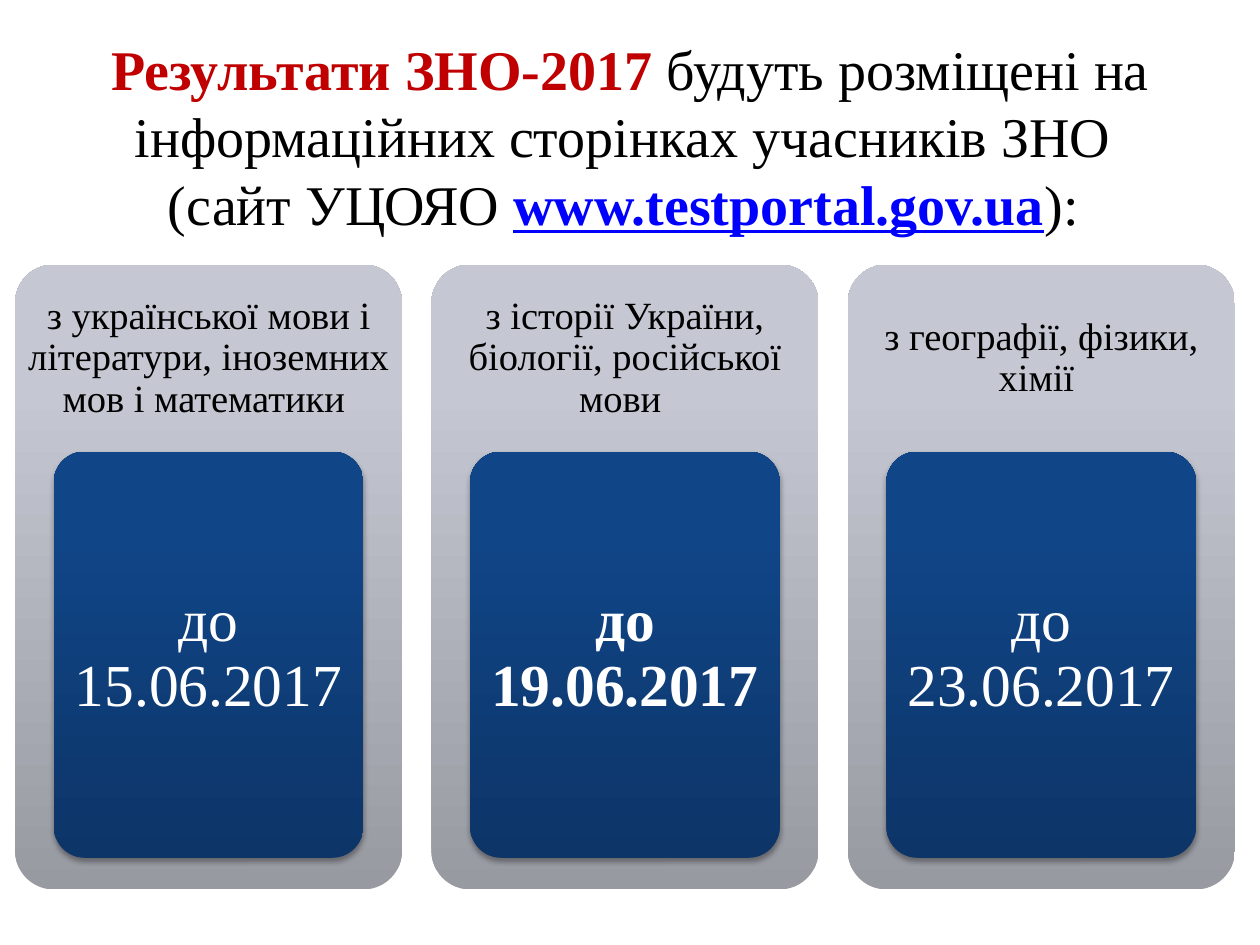
from copy import deepcopy
from dataclasses import dataclass

from lxml.etree import SubElement
from pptx import Presentation
from pptx.dml.color import RGBColor
from pptx.enum.shapes import MSO_SHAPE as Shape
from pptx.enum.text import MSO_ANCHOR as Anchor, PP_ALIGN as Align
from pptx.oxml.ns import qn
from pptx.util import Pt


@dataclass(frozen=True)
class Theme:
    font: str = "Times New Roman"
    title_size: int = 32
    label_size: int = 22
    date_size: int = 34
    text: str = "000000"
    accent: str = "C00000"
    link: str = "0000FF"
    light: str = "FFFFFF"
    shadow: str = "000000"
    # Gradients run from bottom to top
    panel: tuple = ((0, "989AA2"), (0.8, "C5C8D2"), (1, "C5C9D3"))
    card: tuple = ((0, "0D3568"), (0.8, "104587"), (1, "0E458A"))


def add_run(p, text, *, font, size, color, bold=False, underline=False):
    r = p.add_run()
    r.text = text
    r.font.name = font
    r.font.size = Pt(size)
    r.font.bold = bold
    r.font.underline = underline
    r.font.color.rgb = RGBColor.from_string(color)


class SlideBuilder:
    def __init__(self, slide, theme):
        self.slide = slide
        self.theme = theme

    def text(self, box, runs, *, size, inset=(7.2, 3.6), spacing=None):
        """Add centred text; runs holds (text, format), None breaks the line."""
        sp = self.slide.shapes.add_textbox(*map(Pt, box))
        tf = sp.text_frame
        tf.word_wrap = True
        tf.vertical_anchor = Anchor.MIDDLE
        tf.margin_left = tf.margin_right = Pt(inset[0])
        tf.margin_top = tf.margin_bottom = Pt(inset[1])
        p = tf.paragraphs[0]
        p.alignment = Align.CENTER
        p.line_spacing = spacing
        for item in runs:
            if item is None:
                p.add_line_break()
                continue
            text, style = item
            add_run(p, text, **{"font": self.theme.font, "size": size,
                                "color": self.theme.text, **style})

    def rounded(self, box, stops, *, shadow=False):
        sp = self.slide.shapes.add_shape(Shape.ROUNDED_RECTANGLE, *map(Pt, box))
        sp.adjustments[0] = 0.1
        sp.line.fill.background()
        sp.shadow.inherit = False
        self.gradient(sp, stops)
        if shadow:
            self.drop_shadow(sp)

    def gradient(self, sp, stops):
        sp.fill.gradient()
        sp.fill.gradient_angle = 90
        gs_list = sp.element.spPr.find(".//" + qn("a:gsLst"))
        gs_list.append(deepcopy(gs_list[-1]))
        for stop, (position, color) in zip(sp.fill.gradient_stops, stops):
            stop.position = position
            stop.color.rgb = RGBColor.from_string(color)

    def drop_shadow(self, sp):
        effects = sp.element.spPr.find(qn("a:effectLst"))
        outer = SubElement(effects, qn("a:outerShdw"), blurRad=str(Pt(3.1)),
                           dist=str(Pt(1.8)), dir="5400000", rotWithShape="0")
        color = SubElement(outer, qn("a:srgbClr"), val=self.theme.shadow)
        SubElement(color, qn("a:alpha"), val="35000")

    def column(self, left, label, date, *, bold):
        t = self.theme
        # Panel with the subjects
        self.rounded((left, 151.2, 221.2, 357.1), t.panel)
        self.text((left, 151.2, 221.2, 107.2), [(label, {})],
                  size=t.label_size, inset=(6.6, 6.6), spacing=0.9)
        # Card with the date
        self.rounded((left + 22.1, 258.1, 177, 232.1), t.card, shadow=True)
        self.text((left + 27.3, 263.3, 166.6, 221.7),
                  [(date, {"color": t.light, "bold": bold})],
                  size=t.date_size, inset=(6.8, 5.1), spacing=0.9)


def main():
    theme = Theme()
    prs = Presentation()
    prs.slide_width, prs.slide_height = Pt(720), Pt(540)
    s = SlideBuilder(prs.slides.add_slide(prs.slide_layouts[6]), theme)

    # Title
    s.text((14.2, 15.1, 692, 124.6), [
        ("Результати ЗНО-2017 ", {"color": theme.accent, "bold": True}),
        ("будуть розміщені на інформаційних сторінках учасників ЗНО ", {}),
        None,
        ("(сайт УЦОЯО ", {}),
        ("www.testportal.gov.ua",
         {"color": theme.link, "bold": True, "underline": True}),
        ("): ", {}),
    ], size=theme.title_size)

    # Columns of subjects and dates
    columns = [
        ("з української мови і літератури, іноземних мов і математики ",
         "до 15.06.2017", False),
        ("з історії України, біології, російської мови ",
         "до 19.06.2017", True),
        ("з географії, фізики, хімії ", "до 23.06.2017", False),
    ]
    for i, (label, date, bold) in enumerate(columns):
        s.column(8.6 + 237.9 * i, label, date, bold=bold)

    prs.save("out.pptx")


if __name__ == "__main__":
    main()
